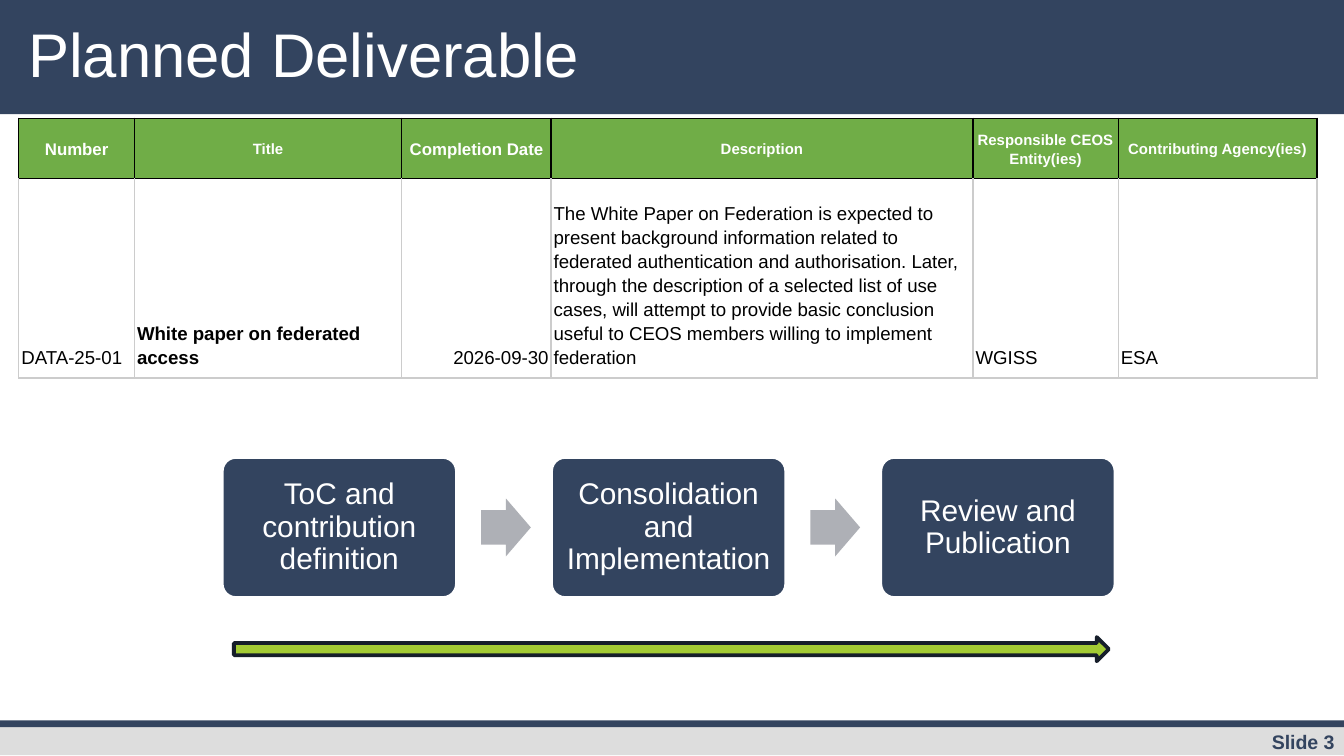
"""Build the planned deliverable slide with its table and process steps."""
import pptx
import pptx.util
import pptx.dml.color
import pptx.enum.shapes
import pptx.enum.text
import pptx.oxml
import pptx.oxml.ns

Inches = pptx.util.Inches
Pt = pptx.util.Pt
RGBColor = pptx.dml.color.RGBColor
SHAPE = pptx.enum.shapes.MSO_SHAPE
ALIGN = pptx.enum.text.PP_ALIGN
ANCHOR = pptx.enum.text.MSO_ANCHOR

NAVY = RGBColor(0x33, 0x44, 0x5F)
DARK_NAVY = RGBColor(0x16, 0x1E, 0x2A)
GREEN = RGBColor(0x70, 0xAD, 0x47)
LIME = RGBColor(0xA3, 0xCB, 0x34)
STEP_GREY = RGBColor(0xAE, 0xB0, 0xB6)
FOOTER_GREY = RGBColor(0xDD, 0xDD, 0xDD)
BORDER_GREY = RGBColor(0xCC, 0xCC, 0xCC)
WHITE = RGBColor(0xFF, 0xFF, 0xFF)
BLACK = RGBColor(0, 0, 0)

TITLE = "Planned Deliverable"
SLIDE_NUMBER = "Slide 3"
COLUMNS = [
    ("Number", 9, 0.86, "DATA-25-01"),
    ("Title", 8, 1.99, "White paper on federated access"),
    ("Completion Date", 9, 1.11, "2026-09-30"),
    ("Description", 8, 3.14,
     "The White Paper on Federation is expected to present background "
     "information related to federated authentication and authorisation. "
     "Later, through the description of a selected list of use cases, will "
     "attempt to provide basic conclusion useful to CEOS members willing to "
     "implement federation"),
    ("Responsible CEOS Entity(ies)", 8, 1.08, "WGISS"),
    ("Contributing Agency(ies)", 8, 1.48, "ESA"),
]
TABLE_BOX = (0.14, 0.88, 9.67, 1.93)
ROW_HEIGHTS = [0.45, 1.44]
STEPS = [
    "ToC and contribution definition",
    "Consolidation and Implementation",
    "Review and Publication",
]
STEP_LEFT, STEP_TOP, STEP_WIDTH, STEP_HEIGHT, STEP_PITCH = 1.65, 3.4, 1.75, 1.05, 2.45


def add_block(slide, kind, box, fill, line=None):
    shape = slide.shapes.add_shape(kind, *map(Inches, box))
    shape.shadow.inherit = False
    shape.fill.solid()
    shape.fill.fore_color.rgb = fill
    if line is None:
        shape.line.fill.background()
    else:
        shape.line.color.rgb = line
        shape.line.width = Pt(2)
    return shape


def set_margins(target, horizontal, vertical):
    target.margin_left = target.margin_right = Inches(horizontal)
    target.margin_top = target.margin_bottom = Inches(vertical)


def write(frame, text, size, color, align=ALIGN.LEFT, bold=False, spacing=1.0):
    paragraph = frame.paragraphs[0]
    paragraph.text = text
    paragraph.alignment = align
    paragraph.line_spacing = spacing
    paragraph.font.name = "Arial"
    paragraph.font.size = Pt(size)
    paragraph.font.bold = bold
    paragraph.font.color.rgb = color


def add_label(slide, box, text, size, color, **style):
    frame = slide.shapes.add_textbox(*map(Inches, box)).text_frame
    frame.word_wrap = True
    frame.vertical_anchor = ANCHOR.TOP
    set_margins(frame, 0.07, 0.04)
    write(frame, text, size, color, **style)


def set_borders(cell, side_color, top_color, bottom_color):
    properties = cell._tc.get_or_add_tcPr()
    colors = {"lnL": side_color, "lnR": side_color, "lnT": top_color, "lnB": bottom_color}
    for tag, color in colors.items():
        properties.append(pptx.oxml.parse_xml(
            f'<a:{tag} {pptx.oxml.ns.nsdecls("a")} w="{Pt(0.75)}"><a:solidFill>'
            f'<a:srgbClr val="{color}"/></a:solidFill></a:{tag}>'))


def add_deliverable_table(slide):
    table_frame = slide.shapes.add_table(2, len(COLUMNS), *map(Inches, TABLE_BOX))
    table = table_frame.table
    table.horz_banding = False
    for row, height in zip(table.rows, ROW_HEIGHTS):
        row.height = Inches(height)
    for index, (heading, size, width, value) in enumerate(COLUMNS):
        table.columns[index].width = Inches(width)
        header, body = table.cell(0, index), table.cell(1, index)
        for cell in (header, body):
            set_margins(cell, 0.02, 0.07)
        header.vertical_anchor = ANCHOR.MIDDLE
        set_borders(header, BLACK, BLACK, BLACK)
        header.fill.solid()
        header.fill.fore_color.rgb = GREEN
        write(header.text_frame, heading, size, WHITE, ALIGN.CENTER, True, 1.15)
        body.vertical_anchor = ANCHOR.BOTTOM
        set_borders(body, BORDER_GREY, BLACK, BORDER_GREY)
        body.fill.background()
        align = ALIGN.RIGHT if heading == "Completion Date" else ALIGN.LEFT
        write(body.text_frame, value, 10, BLACK, align, heading == "Title", 1.15)
    table_frame.width, table_frame.height = map(Inches, TABLE_BOX[2:])


def add_process(slide):
    for index, step in enumerate(STEPS):
        left = STEP_LEFT + index * STEP_PITCH
        box = add_block(slide, SHAPE.ROUNDED_RECTANGLE,
                        (left, STEP_TOP, STEP_WIDTH, STEP_HEIGHT), NAVY, WHITE)
        box.adjustments[0] = 0.1
        frame = box.text_frame
        frame.word_wrap = True
        frame.vertical_anchor = ANCHOR.MIDDLE
        set_margins(frame, 0.07, 0.07)
        write(frame, step, 16, WHITE, ALIGN.CENTER, spacing=0.9)
        if index < len(STEPS) - 1:
            arrow = add_block(slide, SHAPE.RIGHT_ARROW,
                              (left + 1.93, 3.71, 0.37, 0.43), STEP_GREY)
            arrow.adjustments[0] = 0.6
    add_block(slide, SHAPE.RIGHT_ARROW, (1.74, 4.74, 6.51, 0.18), LIME, DARK_NAVY)


def main():
    presentation = pptx.Presentation()
    presentation.slide_width = Inches(10)
    presentation.slide_height = presentation.slide_width * 9 // 16
    slide = presentation.slides.add_slide(presentation.slide_layouts[6])
    add_block(slide, SHAPE.RECTANGLE, (0, 0, 10, 0.85), NAVY)
    add_block(slide, SHAPE.RECTANGLE, (0, 5.39, 10, 0.23), FOOTER_GREY)
    add_block(slide, SHAPE.RECTANGLE, (0, 5.36, 10, 0.05), NAVY)
    add_label(slide, (8.42, 5.39, 1.58, 0.25), SLIDE_NUMBER, 10.5, NAVY,
              align=ALIGN.RIGHT, bold=True)
    add_label(slide, (0.14, 0.14, 7.7, 0.64), TITLE, 33, WHITE, spacing=0.9)
    add_deliverable_table(slide)
    add_process(slide)
    presentation.save("out.pptx")


if __name__ == "__main__":
    main()
